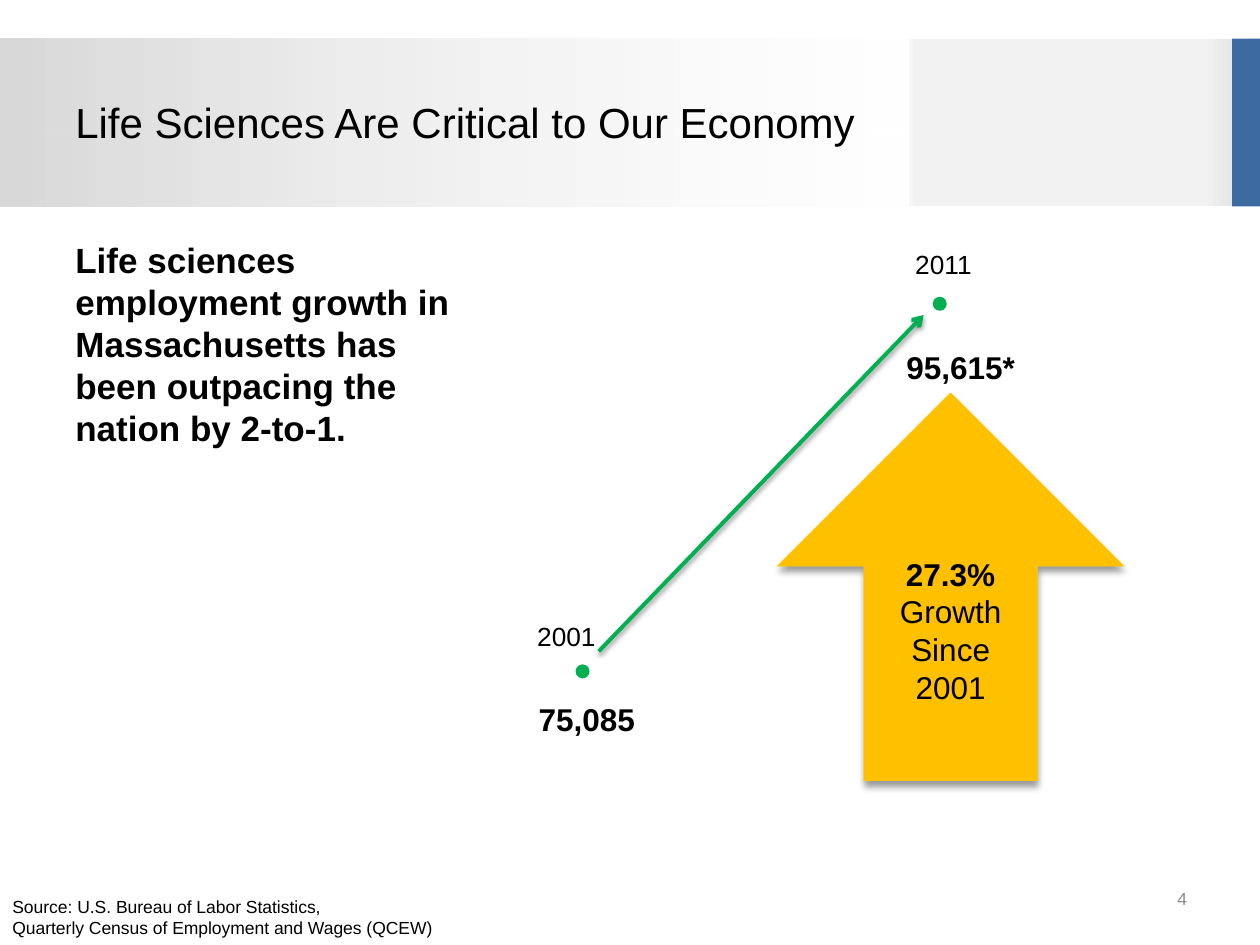
from dataclasses import dataclass

from lxml import etree
from pptx import Presentation
from pptx.dml.color import RGBColor
from pptx.enum.shapes import MSO_CONNECTOR, MSO_SHAPE
from pptx.enum.text import MSO_ANCHOR, PP_ALIGN
from pptx.oxml.ns import qn
from pptx.util import Cm, Pt

RECTANGLE, OVAL, UP_ARROW = MSO_SHAPE.RECTANGLE, MSO_SHAPE.OVAL, MSO_SHAPE.UP_ARROW
STRAIGHT = MSO_CONNECTOR.STRAIGHT
TOP, MIDDLE = MSO_ANCHOR.TOP, MSO_ANCHOR.MIDDLE
LEFT, CENTER, RIGHT = PP_ALIGN.LEFT, PP_ALIGN.CENTER, PP_ALIGN.RIGHT


@dataclass(frozen=True)
class Theme:
    font: str = "Arial"
    ink: str = "000000"
    muted: str = "8C8C8C"
    white: str = "FFFFFF"
    light: str = "F2F2F2"
    grey: str = "D9D9D9"
    blue: str = "3D6AA1"
    green: str = "00B050"
    gold: str = "FFC000"
    gold_edge: str = "FFCC00"
    title: int = 24
    body: int = 20
    figure: int = 18
    year: int = 15
    small: int = 10


@dataclass(frozen=True)
class Area:
    left: float
    top: float
    width: float
    height: float

    def lengths(self) -> list:
        return [Cm(value) for value in (self.left, self.top, self.width, self.height)]


@dataclass(frozen=True)
class Label:
    area: Area
    lines: tuple
    size: int
    bold: bool = False
    color: str = Theme.ink
    align: int = LEFT
    anchor: int = TOP
    inset: tuple = (0.25, 0.13)


@dataclass(frozen=True)
class Shadow:
    opacity: int
    blur: float
    distance: float


THEME = Theme()
BAND_TOP, BAND_HEIGHT = 0.78, 3.38
DOT = 0.21
FIGURE_INSET = (0.28, 0.15)

LABELS = (
    Label(Area(18.26, 17.6, 5.92, 1.02), ("4",), THEME.small,
          color=THEME.muted, align=RIGHT, anchor=MIDDLE),
    Label(Area(1.27, 1.3, 16.71, 2.31), ("Life Sciences Are Critical to Our Economy",),
          THEME.title, anchor=MIDDLE),
    Label(Area(1.27, 4.67, 8.05, 4.52),
          ("Life sciences employment growth in Massachusetts has been outpacing "
           "the nation by 2-to-1.",), THEME.body, bold=True),
    Label(Area(0, 17.93, 9.1, 1.12),
          ("Source: U.S. Bureau of Labor Statistics,",
           "Quarterly Census of Employment and Wages (QCEW)"), THEME.small),
    Label(Area(18.2, 4.88, 1.91, 0.89), ("2011",), THEME.year),
    Label(Area(10.58, 12.37, 2.12, 0.89), ("2001",), THEME.year),
    Label(Area(10.58, 13.97, 2.54, 1.06), ("75,085",), THEME.figure, bold=True,
          inset=FIGURE_INSET),
    Label(Area(17.99, 6.86, 2.96, 1.06), ("95,615*",), THEME.figure, bold=True,
          inset=FIGURE_INSET),
)
DOTS = (Area(18.84, 6.02, DOT, DOT), Area(11.64, 13.43, DOT, DOT))


def rgb(color: str) -> RGBColor:
    return RGBColor.from_string(color)


def add_block(page, kind, area: Area, fill=None, line=None, weight=0.0):
    shape = page.shapes.add_shape(kind, *area.lengths())
    shape.shadow.inherit = False
    if fill:
        shape.fill.solid()
        shape.fill.fore_color.rgb = rgb(fill)
    if line:
        shape.line.color.rgb = rgb(line)
        shape.line.width = Pt(weight)
    else:
        shape.line.fill.background()
    return shape


def set_gradient(shape, angle: int, first: str, last: str, end: float) -> None:
    shape.fill.gradient()
    shape.fill.gradient_angle = angle
    for stop, color, position in zip(shape.fill.gradient_stops, (first, last), (0, end)):
        stop.color.rgb = rgb(color)
        stop.position = position


def set_opacity(color_element, percent: int) -> None:
    etree.SubElement(color_element, qn("a:alpha"), val=str(percent * 1000))


def add_shadow(shape, shadow: Shadow) -> None:
    properties = shape._element.spPr
    effects = properties.find(qn("a:effectLst"))
    if effects is None:
        effects = etree.SubElement(properties, qn("a:effectLst"))
    outer = etree.SubElement(
        effects, qn("a:outerShdw"), blurRad=str(Pt(shadow.blur)),
        dist=str(Pt(shadow.distance)), dir="5400000", algn="ctr", rotWithShape="0")
    set_opacity(etree.SubElement(outer, qn("a:srgbClr"), val=THEME.ink), shadow.opacity)


def write(frame, label: Label) -> None:
    frame.word_wrap = True
    frame.vertical_anchor = label.anchor
    frame.margin_left = frame.margin_right = Cm(label.inset[0])
    frame.margin_top = frame.margin_bottom = Cm(label.inset[1])
    for index, line in enumerate(label.lines):
        para = frame.add_paragraph() if index else frame.paragraphs[0]
        para.text = line
        para.alignment = label.align
        para.font.name = THEME.font
        para.font.size = Pt(label.size)
        para.font.bold = label.bold
        para.font.color.rgb = rgb(label.color)


def add_label(page, label: Label) -> None:
    write(page.shapes.add_textbox(*label.area.lengths()).text_frame, label)


def add_header(page) -> None:
    right = add_block(page, RECTANGLE, Area(18.31, BAND_TOP, 7.09, BAND_HEIGHT),
                      line=THEME.white, weight=0.75)
    set_gradient(right, 180, THEME.grey, THEME.light, 0.16)
    add_block(page, RECTANGLE, Area(24.84, BAND_TOP, 0.56, BAND_HEIGHT), THEME.blue)
    left = add_block(page, RECTANGLE, Area(0, BAND_TOP, 18.39, BAND_HEIGHT))
    set_gradient(left, 0, THEME.grey, THEME.white, 1)
    set_opacity(left._element.spPr.findall(".//" + qn("a:srgbClr"))[-1], 41)


def add_growth_arrow(page) -> None:
    area = Area(15.67, 7.92, 6.99, 7.82)
    arrow = add_block(page, UP_ARROW, area, THEME.gold, THEME.gold_edge, 0.25)
    add_shadow(arrow, Shadow(40, 4, 3))
    write(arrow.text_frame, Label(area, ("27.3%", "Growth", "Since", "2001"),
                                  THEME.figure, align=CENTER, anchor=MIDDLE))
    arrow.text_frame.paragraphs[0].font.bold = True


def add_trend(page) -> None:
    for dot in DOTS:
        add_block(page, OVAL, dot, THEME.green, THEME.green, 2)
    trend = page.shapes.add_connector(STRAIGHT, Cm(12.07), Cm(13.13), Cm(18.62), Cm(6.35))
    trend.line.color.rgb = rgb(THEME.green)
    trend.line.width = Pt(2.25)
    etree.SubElement(trend.line._get_or_add_ln(), qn("a:tailEnd"), type="arrow")
    add_shadow(trend, Shadow(38, 3.1, 1.6))


def main() -> None:
    deck = Presentation()
    deck.slide_width, deck.slide_height = Cm(25.4), Cm(19.05)
    page = deck.slides.add_slide(deck.slide_layouts[6])
    add_header(page)
    add_growth_arrow(page)
    for label in LABELS:
        add_label(page, label)
    add_trend(page)
    deck.save("out.pptx")


if __name__ == "__main__":
    main()
